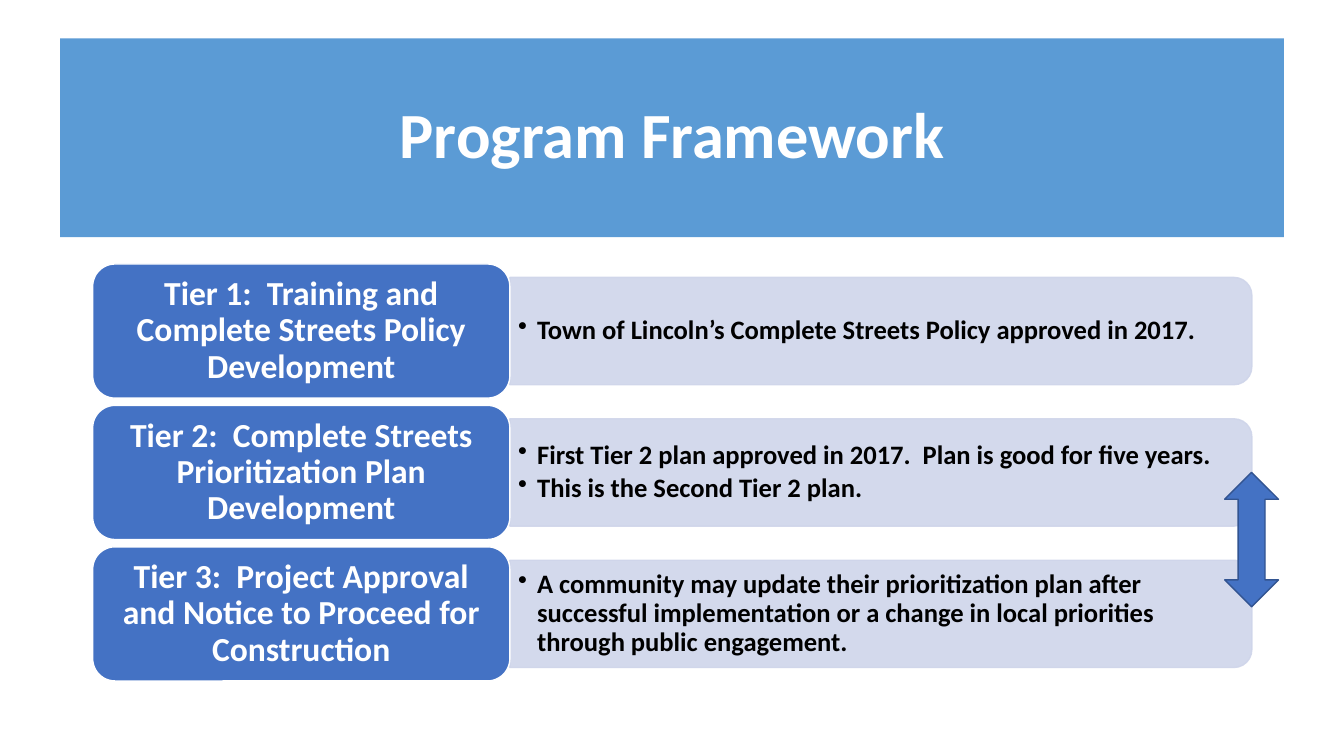
import pptx
import pptx.dml.color
import pptx.enum.shapes
import pptx.enum.text
import pptx.oxml.ns
import pptx.util
from lxml import etree

Pt = pptx.util.Pt
RGBColor = pptx.dml.color.RGBColor
MSO_SHAPE = pptx.enum.shapes.MSO_SHAPE
PP_ALIGN = pptx.enum.text.PP_ALIGN

BANNER_BLUE = RGBColor(0x5B, 0x9B, 0xD5)
TIER_BLUE = RGBColor(0x44, 0x72, 0xC4)
ARROW_EDGE = RGBColor(0x32, 0x54, 0x91)
PANEL_LAVENDER = RGBColor(0xCF, 0xD5, 0xEA)
WHITE = RGBColor(0xFF, 0xFF, 0xFF)
BLACK = RGBColor(0x00, 0x00, 0x00)

FONT = "Calibri"
TIER_PITCH = 101
TIER_HEIGHT = 95.8
CARD_WIDTH = 298
PANEL_SHARE = 0.8
TIERS = [
    ("Tier 1:  Training and Complete Streets Policy Development",
     ["Town of Lincoln’s Complete Streets Policy approved in 2017."]),
    ("Tier 2:  Complete Streets Prioritization Plan Development",
     ["First Tier 2 plan approved in 2017.  Plan is good for five years.",
      "This is the Second Tier 2 plan."]),
    ("Tier 3:  Project Approval and Notice to Proceed for Construction",
     ["A community may update their prioritization plan after successful "
      "implementation or a change in local priorities through public engagement."]),
]


def add_block(slide, preset, box, fill, edge=None):
    """Add a filled preset shape without shadow, outlined only if an edge colour is given."""
    block = slide.shapes.add_shape(preset, *map(Pt, box))
    block.shadow.inherit = False
    block.fill.solid()
    block.fill.fore_color.rgb = fill
    if edge is None:
        block.line.fill.background()
    else:
        block.line.color.rgb = edge
        block.line.width = Pt(1)
    return block


def write_lines(holder, lines, size, color, align):
    """Write bold lines, one paragraph each, centred vertically; return the paragraphs."""
    frame = holder.text_frame
    frame.word_wrap = True
    frame.vertical_anchor = pptx.enum.text.MSO_ANCHOR.MIDDLE
    for index, line in enumerate(lines):
        paragraph = frame.add_paragraph() if index else frame.paragraphs[0]
        paragraph.alignment = align
        paragraph.line_spacing = 0.9
        run = paragraph.add_run()
        run.text = line
        run.font.name = FONT
        run.font.size = Pt(size)
        run.font.bold = True
        run.font.color.rgb = color
    return frame.paragraphs


def add_bullet(paragraph):
    """Give a paragraph a round bullet with a hanging indent."""
    paragraph.space_after = Pt(3)
    properties = paragraph._p.get_or_add_pPr()
    properties.set("marL", str(Pt(13.5)))
    properties.set("indent", str(-Pt(13.5)))
    bullet = etree.SubElement(properties, pptx.oxml.ns.qn("a:buChar"))
    bullet.set("char", "•")


def add_banner(slide, box, title):
    """Place the title banner."""
    banner = add_block(slide, MSO_SHAPE.RECTANGLE, box, BANNER_BLUE)
    write_lines(banner, [title], 46, WHITE, PP_ALIGN.CENTER)


def add_panel(slide, box, points):
    """Place a panel rounded on its right side, with its bullet points."""
    left, top, width, height = box
    turned = (left + (width - height) / 2, top + (height - width) / 2, height, width)
    panel = add_block(slide, MSO_SHAPE.ROUND_2_SAME_RECTANGLE, turned,
                      PANEL_LAVENDER, PANEL_LAVENDER)
    panel.rotation = 90
    for color in panel._element.spPr.iter(pptx.oxml.ns.qn("a:srgbClr")):
        etree.SubElement(color, pptx.oxml.ns.qn("a:alpha")).set("val", "90000")

    points_box = slide.shapes.add_textbox(Pt(left), Pt(top + 4), Pt(width - 4), Pt(height - 8))
    frame = points_box.text_frame
    frame.margin_left = frame.margin_right = Pt(6)
    frame.margin_top = frame.margin_bottom = Pt(3)
    for paragraph in write_lines(points_box, points, 19, BLACK, PP_ALIGN.LEFT):
        add_bullet(paragraph)


def add_tier(slide, box, name, points):
    """Place one tier: its name card and the panel beside it."""
    left, top, width, height = box
    panel_height = height * PANEL_SHARE
    panel_top = top + (height - panel_height) / 2
    add_panel(slide, (left + CARD_WIDTH, panel_top, width - CARD_WIDTH, panel_height), points)
    card = add_block(slide, MSO_SHAPE.ROUNDED_RECTANGLE, (left, top, CARD_WIDTH, height),
                     TIER_BLUE, WHITE)
    write_lines(card, [name], 24, WHITE, PP_ALIGN.CENTER)


def add_tiers(slide, box):
    """Stack the tiers from the top of the box at an equal pitch."""
    left, top, width = box
    for index, (name, points) in enumerate(TIERS):
        add_tier(slide, (left, top + index * TIER_PITCH, width, TIER_HEIGHT), name, points)


def main():
    """Build the programme framework slide."""
    deck = pptx.Presentation()
    deck.slide_width, deck.slide_height = Pt(960), Pt(540)
    slide = deck.slides.add_slide(deck.slide_layouts[6])
    add_banner(slide, (43, 27.4, 874, 142), "Program Framework")
    add_tiers(slide, (66.2, 188.6, 828))
    add_block(slide, MSO_SHAPE.UP_DOWN_ARROW, (874.8, 337.4, 38.4, 96), TIER_BLUE, ARROW_EDGE)
    deck.save("out.pptx")


if __name__ == "__main__":
    main()
